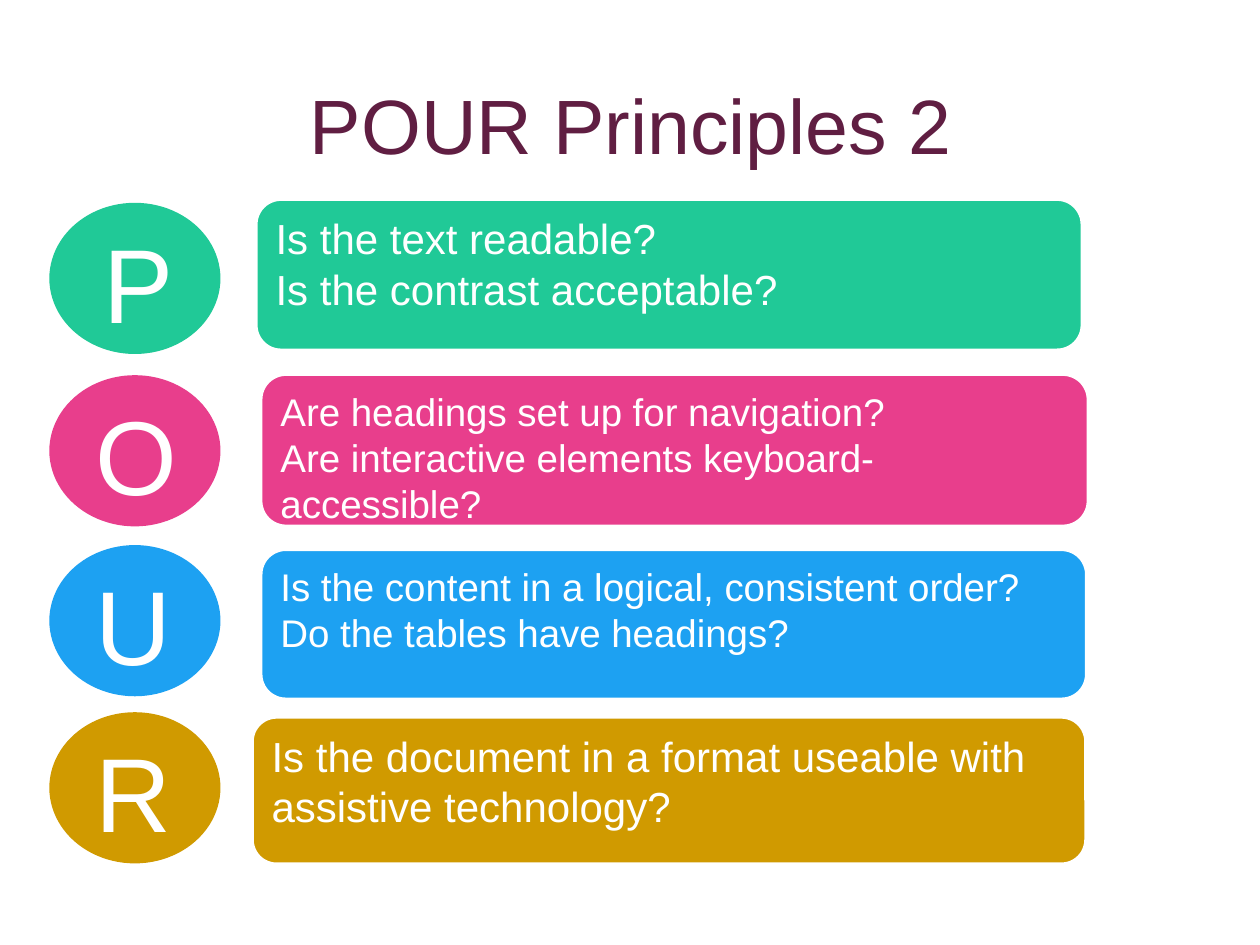
"""Build the POUR principles slide."""
from pptx import Presentation
from pptx.dml.color import RGBColor
from pptx.enum import shapes, text
from pptx.util import Pt

HUES = {
    "white": "FFFFFF",
    "plum": "601E42",
    "green": "20C997",
    "pink": "E83E8C",
    "blue": "1DA1F2",
    "gold": "D09A00",
}

ROWS = [
    ("P", "green", 115.9, 52, (146.2, 113.8, 472.3, 86.4), 24,
     "Is the text readable?\nIs the contrast acceptable?"),
    ("O", "pink", 214.4, 47.5, (149, 213.8, 473, 87), 22,
     "Are headings set up for navigation?\n"
     "Are interactive elements keyboard-accessible?"),
    ("U", "blue", 311.5, 47.5, (149, 313.9, 472, 85.7), 22,
     "Is the content in a logical, consistent order?\n"
     "Do the tables have headings?"),
    ("R", "gold", 407, 47.5, (144, 409.7, 476.6, 84.2), 24,
     "Is the document in a format useable with assistive technology?"),
]


def tint(name):
    return RGBColor.from_string(HUES[name])


def write(frame, words, size, hue="white", align=text.PP_ALIGN.LEFT,
          anchor=text.MSO_ANCHOR.TOP):
    frame.text = words
    frame.word_wrap = True
    frame.vertical_anchor = anchor
    for para in frame.paragraphs:
        para.alignment = align
        font = para.runs[0].font
        font.name = "Arial"
        font.size = Pt(size)
        font.color.rgb = tint(hue)


def block(parent, kind, area, hue, edge=None):
    shape = parent.add_shape(kind, *map(Pt, area))
    shape.shadow.inherit = False
    shape.fill.solid()
    shape.fill.fore_color.rgb = tint(hue)
    if edge:
        shape.line.color.rgb = tint(edge)
        shape.line.width = Pt(2)
    else:
        shape.line.fill.background()
    return shape


def badge(slide, letter, hue, top, left):
    group = slide.shapes.add_group_shape().shapes
    block(group, shapes.MSO_SHAPE.OVAL, (28.2, top, 97.8, 86.4), hue)
    label = group.add_textbox(Pt(left), Pt(top + 5.4), Pt(50), Pt(81))
    write(label.text_frame, letter, 60)


def panel(slide, words, hue, area, size):
    box = block(slide.shapes, shapes.MSO_SHAPE.ROUNDED_RECTANGLE,
                area, hue, edge="white")
    write(box.text_frame, words, size)


def head(slide, words):
    title = slide.shapes.title
    title.left, title.top, title.width, title.height = map(
        Pt, (36.7, 25.5, 648, 90))
    write(title.text_frame, words, 44, "plum", text.PP_ALIGN.CENTER,
          text.MSO_ANCHOR.MIDDLE)


def main():
    deck = Presentation()
    deck.slide_width, deck.slide_height = Pt(720), Pt(540)
    slide = deck.slides.add_slide(deck.slide_layouts[5])
    head(slide, "POUR Principles 2")
    for letter, hue, top, left, area, size, words in reversed(ROWS):
        panel(slide, words, hue, area, size)
        badge(slide, letter, hue, top, left)
    deck.save("out.pptx")


if __name__ == "__main__":
    main()
